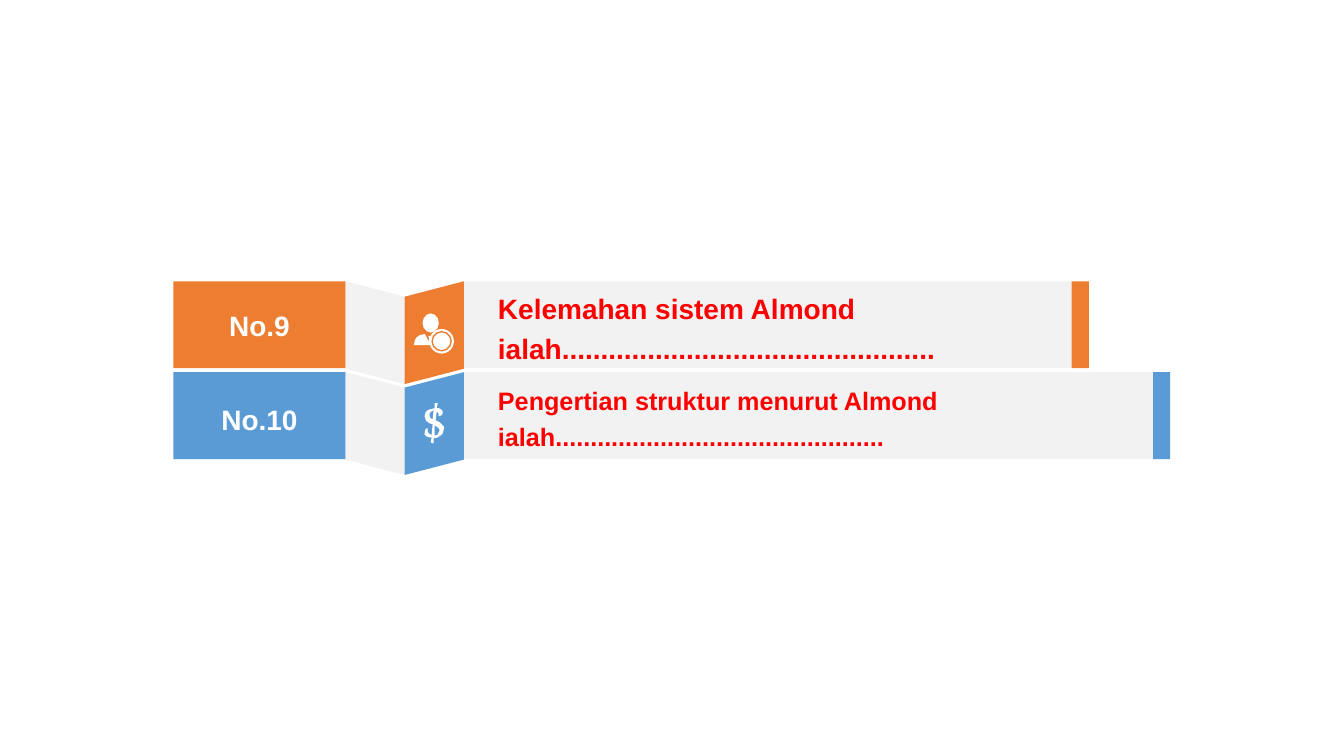
"""Build a slide with two folded ribbons, each carrying a numbered question."""
from pptx import Presentation
from pptx.dml.color import RGBColor
from pptx.enum.shapes import MSO_SHAPE
from pptx.enum.text import MSO_ANCHOR, PP_ALIGN
from pptx.util import Cm, Pt

ORANGE, BLUE, GREY, WHITE, RED = "ED7D31", "5B9BD5", "F2F2F2", "FFFFFF", "FF0000"
LABEL_LEFT, LABEL_WIDTH = 4.37, 4.34
FIRST_TOP, ROW_STEP, ROW_HEIGHT = 7.09, 2.29, 2.19
FOLD_WIDTH, FOLD_LENGTH = 1.49, 2.59
FOLD_LEFT = LABEL_LEFT + LABEL_WIDTH
PANEL_LEFT = FOLD_LEFT + 2 * FOLD_WIDTH
CAP_WIDTH = 0.43
ICON_UNIT = Cm(2.54) / 100

ROWS = [
    ("No.9", "Kelemahan sistem Almond ialah" + "." * 48, 20, 15.32, ORANGE, None),
    ("No.10", "Pengertian struktur menurut Almond ialah" + "." * 47, 18, 17.37, BLUE, 1.2),
]
SHOULDERS = [(16, 31), (0, 31), (1, 26), (3, 23), (6, 21), (11, 20), (15, 28),
             (15, 23), (14, 22), (17, 22), (20, 25), (20, 31)]
DOLLAR = [
    [(19, 23), (17, 21), (15, 19), (11, 17), (12, 8), (13, 9), (14, 11), (14, 13),
     (17, 12), (18, 10), (18, 8), (16, 6), (14, 5), (12, 5), (13, 0), (10, 0),
     (10, 5), (6, 6), (3, 7), (1, 9), (0, 13), (1, 16), (2, 18), (5, 20), (8, 21),
     (7, 32), (6, 31), (4, 30), (3, 28), (3, 25), (2, 25), (1, 26), (0, 29),
     (0, 31), (2, 33), (5, 34), (7, 34), (6, 39), (9, 40), (9, 35), (13, 34),
     (16, 32), (18, 30), (19, 26)],
    [(8, 16), (6, 15), (5, 13), (5, 10), (6, 9), (7, 8), (9, 7)],
    [(14, 29), (13, 31), (11, 32), (10, 32), (10, 22), (13, 24), (14, 25), (15, 27)],
]


def color(value):
    """Turn a hex string into a colour."""
    return RGBColor.from_string(value)


def write(shape, text, size=20, fill=WHITE, align=PP_ALIGN.CENTER, spacing=None, indent=0):
    """Put one bold paragraph into a shape."""
    frame = shape.text_frame
    frame.word_wrap = True
    frame.vertical_anchor = MSO_ANCHOR.MIDDLE
    para = frame.paragraphs[0]
    para.alignment = align
    para.line_spacing = spacing
    properties = para._p.get_or_add_pPr()
    properties.set("marL", str(Cm(indent)))
    properties.set("indent", "0")
    span = para.add_run()
    span.text = text
    span.font.name = "Arial"
    span.font.size = Pt(size)
    span.font.bold = True
    span.font.color.rgb = color(fill)


class RibbonPage:
    """Hold the current slide and draw its elements."""

    def __init__(self, deck):
        """Add a blank slide to the deck."""
        self.page = deck.slides.add_slide(deck.slide_layouts[6])

    def paint(self, shape, fill):
        """Give a shape a flat fill with no line or shadow."""
        shape.shadow.inherit = False
        shape.fill.solid()
        shape.fill.fore_color.rgb = color(fill)
        shape.line.fill.background()
        return shape

    def block(self, left, top, width, height, fill, kind=MSO_SHAPE.RECTANGLE):
        """Draw a preset shape."""
        shape = self.page.shapes.add_shape(kind, Cm(left), Cm(top), Cm(width), Cm(height))
        return self.paint(shape, fill)

    def fold(self, left, top, fill, rising):
        """Draw one upright slanted side of the ribbon's fold."""
        inset = (FOLD_LENGTH - FOLD_WIDTH) / 2
        shape = self.block(left - inset, top + inset, FOLD_LENGTH, FOLD_WIDTH,
                           fill, MSO_SHAPE.PARALLELOGRAM)
        shape.adjustments[0] = 0.26
        shape.rotation = 270 if rising else 90
        if rising:
            shape._element.spPr.xfrm.set("flipV", "1")

    def outline(self, left, top, contours, fill):
        """Draw a closed outline, with any further contours as holes."""
        first, *holes = contours
        builder = self.page.shapes.build_freeform(*first[0], scale=ICON_UNIT)
        builder.add_line_segments(first[1:], close=True)
        for hole in holes:
            builder.move_to(*hole[0])
            builder.add_line_segments(hole[1:], close=True)
        return self.paint(builder.convert_to_shape(Cm(left), Cm(top)), fill)

    def investor(self, left, top, accent):
        """Draw a person with a coin."""
        self.block(left + 0.22, top, 0.41, 0.48, WHITE, MSO_SHAPE.OVAL)
        self.outline(left, top + 0.01, [SHOULDERS], WHITE)
        self.block(left + 0.39, top + 0.39, 0.62, 0.62, WHITE, MSO_SHAPE.OVAL)
        ring = self.block(left + 0.46, top + 0.46, 0.48, 0.48, WHITE, MSO_SHAPE.OVAL)
        ring.line.color.rgb = color(accent)
        ring.line.width = Pt(1)

    def row(self, top, label, question, size, width, accent, label_spacing):
        """Draw a whole ribbon with its label and question."""
        tag = self.block(LABEL_LEFT, top, LABEL_WIDTH, ROW_HEIGHT, accent)
        write(tag, label, spacing=label_spacing)
        panel = self.block(PANEL_LEFT, top, width, ROW_HEIGHT, GREY)
        write(panel, question, size=size, fill=RED, align=PP_ALIGN.LEFT,
              spacing=1.2, indent=0.61)
        self.fold(FOLD_LEFT, top, GREY, rising=False)
        self.fold(FOLD_LEFT + FOLD_WIDTH, top, accent, rising=True)
        self.block(PANEL_LEFT + width, top, CAP_WIDTH, ROW_HEIGHT, accent)


def main():
    """Create and save the deck."""
    deck = Presentation()
    deck.slide_width, deck.slide_height = Cm(33.87), Cm(19.05)
    ribbons = RibbonPage(deck)
    for index, content in enumerate(ROWS):
        ribbons.row(FIRST_TOP + index * ROW_STEP, *content)
    ribbons.investor(10.43, 7.9, ORANGE)
    ribbons.outline(10.7, 10.16, DOLLAR, WHITE)
    deck.save("out.pptx")


if __name__ == "__main__":
    main()
